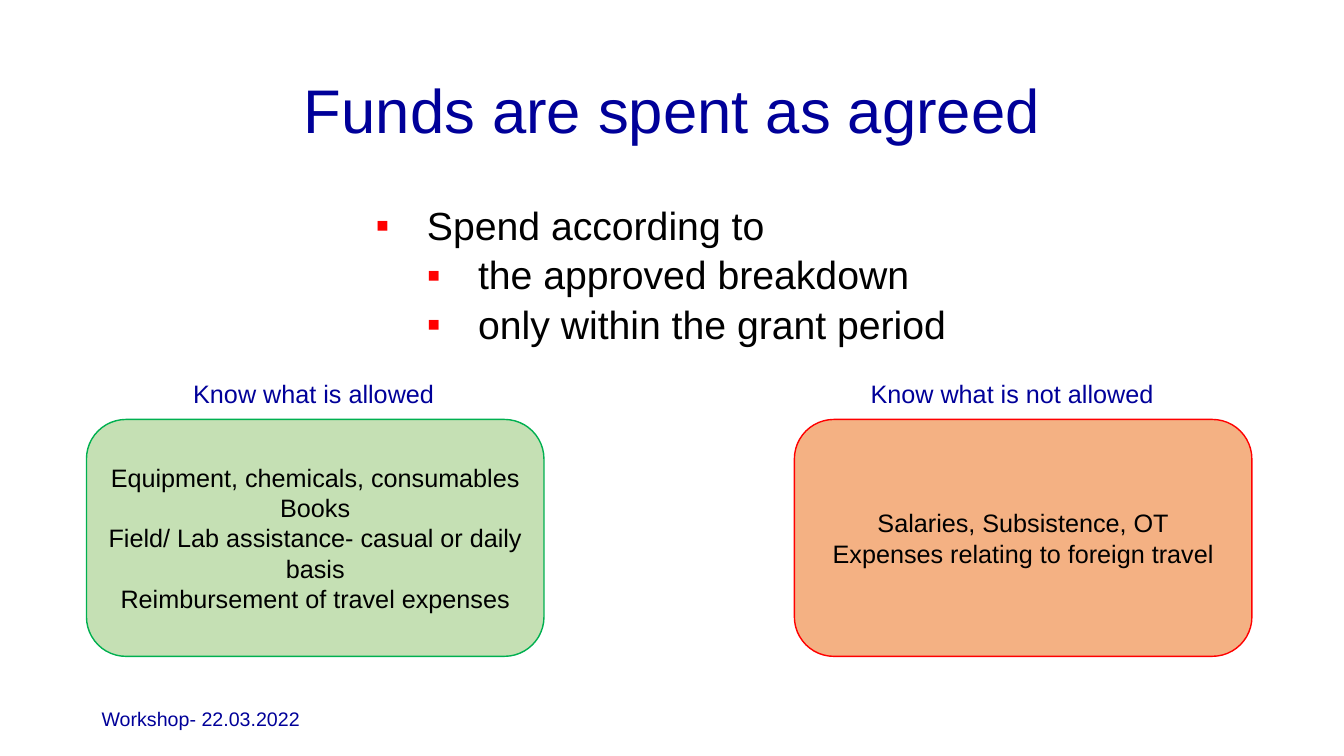
import pptx
import pptx.util
from lxml import etree
from pptx.dml.color import RGBColor
from pptx.enum.shapes import MSO_SHAPE
from pptx.enum.text import MSO_ANCHOR, PP_ALIGN
from pptx.oxml.ns import qn
from pptx.util import Cm, Pt

NAVY = RGBColor(0x00, 0x00, 0x99)
BLACK = RGBColor(0x00, 0x00, 0x00)
RED = RGBColor(0xFF, 0x00, 0x00)
GREEN = RGBColor(0x00, 0xB0, 0x50)
PALE_GREEN = RGBColor(0xC5, 0xE0, 0xB4)
PALE_ORANGE = RGBColor(0xF4, 0xB1, 0x83)
FONT = "Arial"

# Content
TITLE = "Funds are spent as agreed"
FOOTER = "Workshop- 22.03.2022"
BULLETS = [  # (level, text)
    (0, "Spend according to"),
    (1, "the approved breakdown"),
    (1, "only within the grant period"),
]
PANELS = [
    {
        "label": "Know what is allowed",
        "label_left": 4.62, "label_width": 6.63,
        "left": 2.18, "fill": PALE_GREEN, "line": GREEN,
        "items": [
            "Equipment, chemicals, consumables",
            "Books",
            "Field/ Lab assistance- casual or daily basis",
            "Reimbursement of travel expenses",
        ],
    },
    {
        "label": "Know what is not allowed",
        "label_left": 21.69, "label_width": 7.7,
        "left": 20.02, "fill": PALE_ORANGE, "line": RED,
        "items": ["Salaries, Subsistence, OT", "Expenses relating to foreign travel"],
    },
]

# Layout, in centimetres
PANEL_TOP, PANEL_WIDTH, PANEL_HEIGHT = 10.57, 11.53, 5.97
LABEL_TOP, LABEL_HEIGHT = 9.4, 1.02
INDENT = 1.29


def write_text(shape, lines, size, color=BLACK, align=PP_ALIGN.LEFT,
               anchor=MSO_ANCHOR.TOP, line_spacing=None, wrap=True):
    """Fill a shape with one paragraph per line and return the paragraphs."""
    frame = shape.text_frame
    frame.word_wrap = wrap
    frame.vertical_anchor = anchor
    frame.text = "\n".join(lines)
    for paragraph in frame.paragraphs:
        paragraph.alignment = align
        paragraph.line_spacing = line_spacing
        font = paragraph.runs[0].font
        font.name, font.size, font.color.rgb = FONT, Pt(size), color
    return frame.paragraphs


def add_text_box(slide, left, top, width, height):
    return slide.shapes.add_textbox(Cm(left), Cm(top), Cm(width), Cm(height))


def add_bullet(paragraph, level):
    paragraph.level = level
    paragraph.space_before = Pt(5 if level else 10)
    properties = paragraph._p.get_or_add_pPr()
    properties.set("marL", str(Cm(INDENT * (level + 1))))
    properties.set("indent", str(-Cm(INDENT)))
    bullet_color = etree.SubElement(properties, qn("a:buClr"))
    etree.SubElement(bullet_color, qn("a:srgbClr"), val=str(RED))
    etree.SubElement(properties, qn("a:buFont"), typeface=FONT)
    etree.SubElement(properties, qn("a:buChar"), char="▪")


def add_panel(slide, panel):
    shape = slide.shapes.add_shape(
        MSO_SHAPE.ROUNDED_RECTANGLE, Cm(panel["left"]), Cm(PANEL_TOP),
        Cm(PANEL_WIDTH), Cm(PANEL_HEIGHT))
    shape.shadow.inherit = False
    shape.fill.solid()
    shape.fill.fore_color.rgb = panel["fill"]
    shape.line.color.rgb = panel["line"]
    shape.line.width = Pt(1)
    write_text(shape, panel["items"], size=18, align=PP_ALIGN.CENTER,
               anchor=MSO_ANCHOR.MIDDLE)
    label = add_text_box(slide, panel["label_left"], LABEL_TOP,
                         panel["label_width"], LABEL_HEIGHT)
    write_text(label, [panel["label"]], size=18, color=NAVY, wrap=False)


def main():
    presentation = pptx.Presentation()
    presentation.slide_width, presentation.slide_height = Cm(33.87), Cm(19.05)
    slide = presentation.slides.add_slide(presentation.slide_layouts[6])

    # Footer and title
    write_text(add_text_box(slide, 2.31, 17.6, 7.62, 1.02), [FOOTER],
               size=14, color=NAVY, anchor=MSO_ANCHOR.MIDDLE)
    write_text(add_text_box(slide, 2.34, 1.02, 29.21, 3.68), [TITLE],
               size=44, color=NAVY, align=PP_ALIGN.CENTER,
               anchor=MSO_ANCHOR.MIDDLE, line_spacing=0.9)

    # Bulleted rules
    paragraphs = write_text(add_text_box(slide, 9.22, 5.08, 15.44, 4.45),
                            [text for _, text in BULLETS], size=28, line_spacing=0.9)
    for paragraph, (level, _) in zip(paragraphs, BULLETS):
        add_bullet(paragraph, level)

    # Allowed and not allowed
    for panel in PANELS:
        add_panel(slide, panel)

    presentation.save("out.pptx")


if __name__ == "__main__":
    main()
